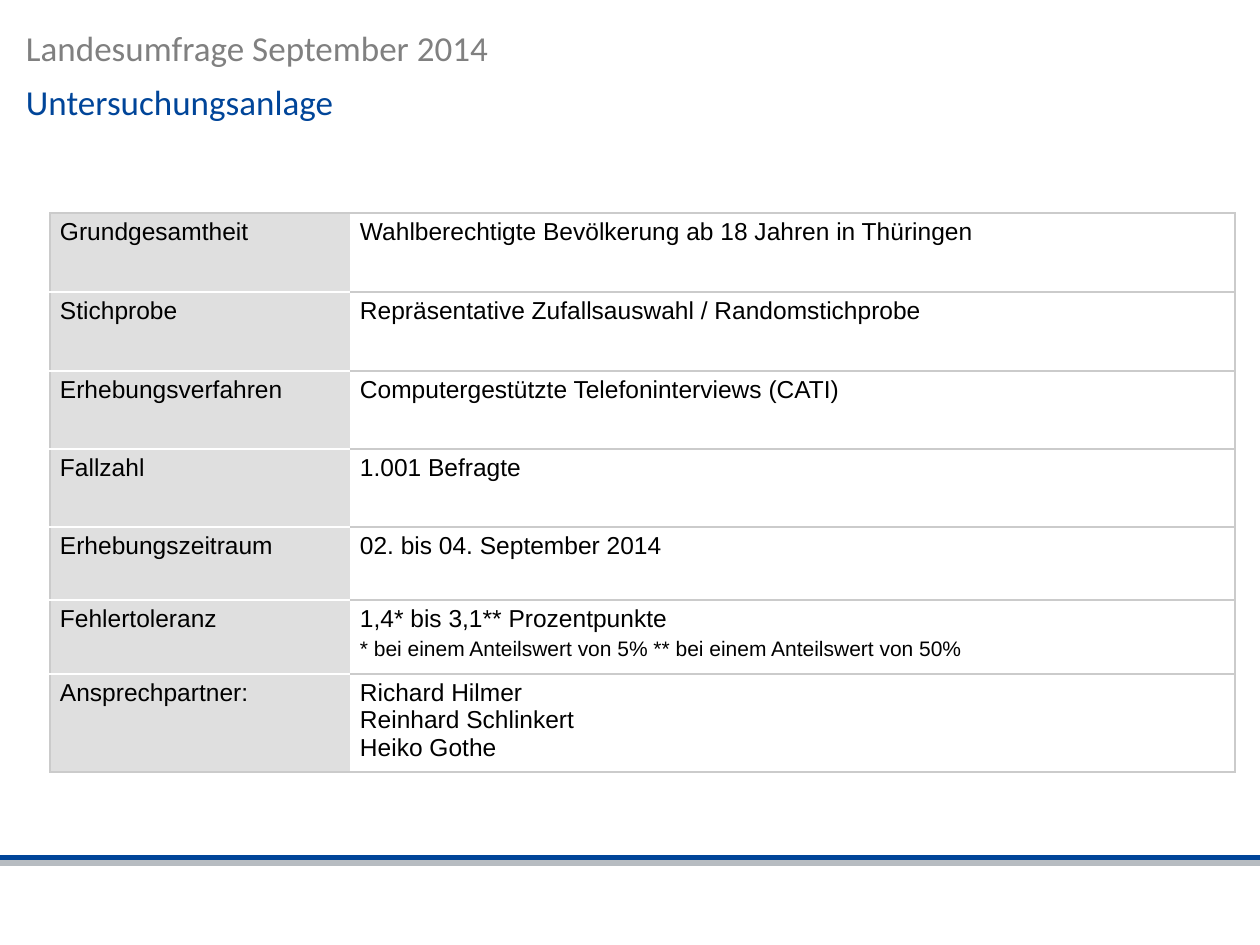
from lxml.etree import SubElement
from pptx import Presentation
from pptx.dml.color import RGBColor
from pptx.enum.shapes import MSO_CONNECTOR
from pptx.oxml.ns import qn
from pptx.util import Emu, Pt

BLUE = RGBColor(0x00, 0x45, 0x99)
GREY = RGBColor(0x80, 0x80, 0x80)
SILVER = RGBColor(0xB7, 0xBC, 0xC1)
BORDER = RGBColor(0xCB, 0xCB, 0xCB)
LABEL_FILL = RGBColor(0xDF, 0xDF, 0xDF)
WHITE = RGBColor(0xFF, 0xFF, 0xFF)
BLACK = RGBColor(0x00, 0x00, 0x00)

COLUMN_WIDTHS = (300, 885)
# Row height, label, lines of the answer
ROWS = [
    (79, "Grundgesamtheit", ["Wahlberechtigte Bevölkerung ab 18 Jahren in Thüringen"]),
    (79, "Stichprobe", ["Repräsentative Zufallsauswahl / Randomstichprobe"]),
    (78, "Erhebungsverfahren", ["Computergestützte Telefoninterviews (CATI)"]),
    (78, "Fallzahl", ["1.001 Befragte"]),
    (73, "Erhebungszeitraum", ["02. bis 04. September 2014"]),
    (74, "Fehlertoleranz", ["1,4* bis 3,1** Prozentpunkte",
                            "* bei einem Anteilswert von 5% ** bei einem Anteilswert von 50%"]),
    (93, "Ansprechpartner:", ["Richard Hilmer", "Reinhard Schlinkert", "Heiko Gothe"]),
]


def px(n):
    return Emu(n * 914400 // 126)


def write(p, text, *, size=14, font="Arial", color=BLACK, after=0):
    r = p.add_run()
    r.text = text
    r.font.size = Pt(size)
    r.font.name = font
    r.font.color.rgb = color
    p.space_after = Pt(after)


def add_heading(slide, text, top, height, color):
    tf = slide.shapes.add_textbox(px(26), px(top), px(1053), px(height)).text_frame
    tf.word_wrap = True
    tf.margin_left = tf.margin_top = tf.margin_right = tf.margin_bottom = 0
    write(tf.paragraphs[0], text, size=20, font="Calibri", color=color)


def add_rule(slide, y, color):
    s = slide.shapes.add_connector(MSO_CONNECTOR.STRAIGHT, 0, px(y), px(1260), px(y))
    s.line.color.rgb = color
    s.line.width = Pt(3)
    SubElement(s._element.spPr, qn("a:effectLst"))


def set_borders(cell, left, right, top, bottom):
    """Draw each edge 1 pt wide in its colour; None hides the edge."""
    tcPr = cell._tc.get_or_add_tcPr()
    for side, color in zip("LRTB", (left, right, top, bottom)):
        ln = SubElement(tcPr, qn(f"a:ln{side}"), w=str(Pt(1)))
        if color is None:
            SubElement(ln, qn("a:noFill"))
        else:
            fill = SubElement(ln, qn("a:solidFill"))
            SubElement(fill, qn("a:srgbClr"), val=str(color))


def fill_cell(cell, lines, fill):
    cell.margin_left = cell.margin_right = px(10)
    cell.margin_top = cell.margin_bottom = px(5)
    cell.fill.solid()
    cell.fill.fore_color.rgb = fill
    tf = cell.text_frame
    after = 0 if len(lines) > 2 else 3
    for i, line in enumerate(lines):
        p = tf.add_paragraph() if i else tf.paragraphs[0]
        write(p, line, size=12 if line.startswith("*") else 14, after=after)


def add_survey_table(slide):
    height = sum(row[0] for row in ROWS)
    table = slide.shapes.add_table(len(ROWS), len(COLUMN_WIDTHS), px(50), px(213),
                                   px(sum(COLUMN_WIDTHS)), px(height)).table
    table.first_row = table.horz_banding = False
    for column, width in zip(table.columns, COLUMN_WIDTHS):
        column.width = px(width)
    last = len(ROWS) - 1
    for i, (row_height, label, lines) in enumerate(ROWS):
        table.rows[i].height = px(row_height)
        label_cell, answer_cell = table.cell(i, 0), table.cell(i, 1)
        set_borders(label_cell, BORDER, None,
                    BORDER if i == 0 else WHITE, BORDER if i == last else WHITE)
        set_borders(answer_cell, None, BORDER, BORDER, BORDER)
        fill_cell(label_cell, [label], LABEL_FILL)
        fill_cell(answer_cell, lines, WHITE)


def main():
    prs = Presentation()
    prs.slide_width, prs.slide_height = px(1260), px(945)
    slide = prs.slides.add_slide(prs.slide_layouts[6])
    add_heading(slide, "Landesumfrage September 2014", 26, 54, GREY)
    add_rule(slide, 858, BLUE)
    add_rule(slide, 863, SILVER)
    add_survey_table(slide)
    add_heading(slide, "Untersuchungsanlage", 81, 101, BLUE)
    prs.save("out.pptx")


if __name__ == "__main__":
    main()
